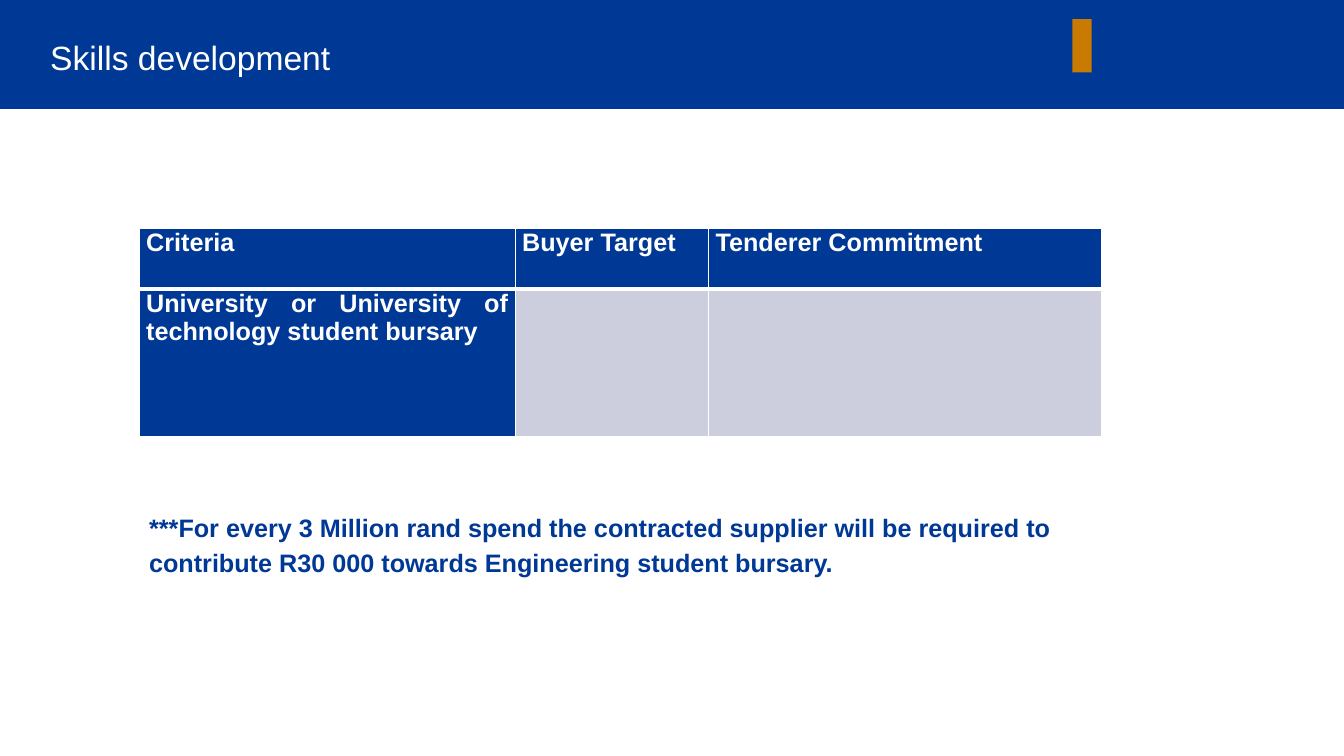
"""Build the skills development slide with its bursary table."""
import pptx
import pptx.util
import pptx.dml.color
import pptx.enum.shapes
import pptx.enum.text
import pptx.oxml

Pt = pptx.util.Pt
RGBColor = pptx.dml.color.RGBColor
ALIGN = pptx.enum.text.PP_ALIGN
ANCHOR = pptx.enum.text.MSO_ANCHOR
RECT = pptx.enum.shapes.MSO_SHAPE.RECTANGLE

BLUE = RGBColor(0x00, 0x38, 0x96)
GOLD = RGBColor(0xC9, 0x7A, 0x00)
GREY = RGBColor(0xCC, 0xCE, 0xDD)
WHITE = RGBColor(0xFF, 0xFF, 0xFF)

TITLE = "Skills development"
ROWS = [
    ["Criteria", "Buyer Target", "Tenderer Commitment"],
    ["University or University of technology student bursary", "", ""],
]
NOTE = ("***For every 3 Million rand spend the contracted supplier will be "
        "required to contribute R30\u00a0000 towards Engineering student bursary.")

WIDTH, HEIGHT = 960, 540
BAND = (0, 0, WIDTH, 77.8)
MARK = (766, 13.7, 13.7, 38)
HEAD = (28.8, 16.6, 748.8, 52.6)
GRID = (99.4, 163.4)
COLS = [268.6, 138.2, 281]
DEPTHS = [43.2, 105.2]
FOOT = (99.4, 359.3, 699.8, 55.4)
THIN, THICK = 1, 3


def style(para, size, color, bold=False):
    for run in para.runs:
        font = run.font
        font.name, font.size, font.bold = "Arial", Pt(size), bold
        font.color.rgb = color


def block(slide, box, color):
    shape = slide.shapes.add_shape(RECT, *map(Pt, box))
    shape.shadow.inherit = False
    shape.fill.solid()
    shape.fill.fore_color.rgb = color
    shape.line.fill.background()


def label(slide, box, text, size, color, bold, space):
    frame = slide.shapes.add_textbox(*map(Pt, box)).text_frame
    frame.word_wrap = True
    frame.text = text
    para = frame.paragraphs[0]
    para.line_spacing = space
    style(para, size, color, bold)
    return frame


def edge(cell, top, base):
    props = cell._tc.get_or_add_tcPr()
    sides = {"lnL": THIN, "lnR": THIN, "lnT": top, "lnB": base}
    for place, (tag, width) in enumerate(sides.items()):
        props.insert(place, pptx.oxml.parse_xml(
            f'<a:{tag} xmlns:a="http://schemas.openxmlformats.org/drawingml/2006/main" '
            f'w="{Pt(width)}"><a:solidFill><a:srgbClr val="{WHITE}"/>'
            f'</a:solidFill></a:{tag}>'))


def fill_cell(cell, text, row):
    cell.fill.solid()
    cell.fill.fore_color.rgb = BLUE if text else GREY
    edge(cell, THICK if row else THIN, THIN if row else THICK)
    cell.margin_left = cell.margin_right = Pt(5)
    cell.margin_top = cell.margin_bottom = 0
    cell.text = text
    para = cell.text_frame.paragraphs[0]
    if row and text:
        para.alignment = ALIGN.JUSTIFY
    style(para, 18, WHITE, True)


def add_grid(slide):
    box = (*GRID, sum(COLS), sum(DEPTHS))
    table = slide.shapes.add_table(len(DEPTHS), len(COLS), *map(Pt, box)).table
    for col, width in zip(table.columns, COLS):
        col.width = Pt(width)
    for row, depth in enumerate(DEPTHS):
        table.rows[row].height = Pt(depth)
        for col, text in enumerate(ROWS[row]):
            fill_cell(table.cell(row, col), text, row)


def main():
    deck = pptx.Presentation()
    deck.slide_width, deck.slide_height = Pt(WIDTH), Pt(HEIGHT)
    slide = deck.slides.add_slide(deck.slide_layouts[6])
    block(slide, BAND, BLUE)
    block(slide, MARK, GOLD)
    head = label(slide, HEAD, TITLE, 24, WHITE, False, 0.9)
    head.vertical_anchor = ANCHOR.MIDDLE
    add_grid(slide)
    foot = label(slide, FOOT, NOTE, 18, BLUE, True, 1.15)
    foot.paragraphs[0].space_after = Pt(6)
    deck.save("out.pptx")


if __name__ == "__main__":
    main()
